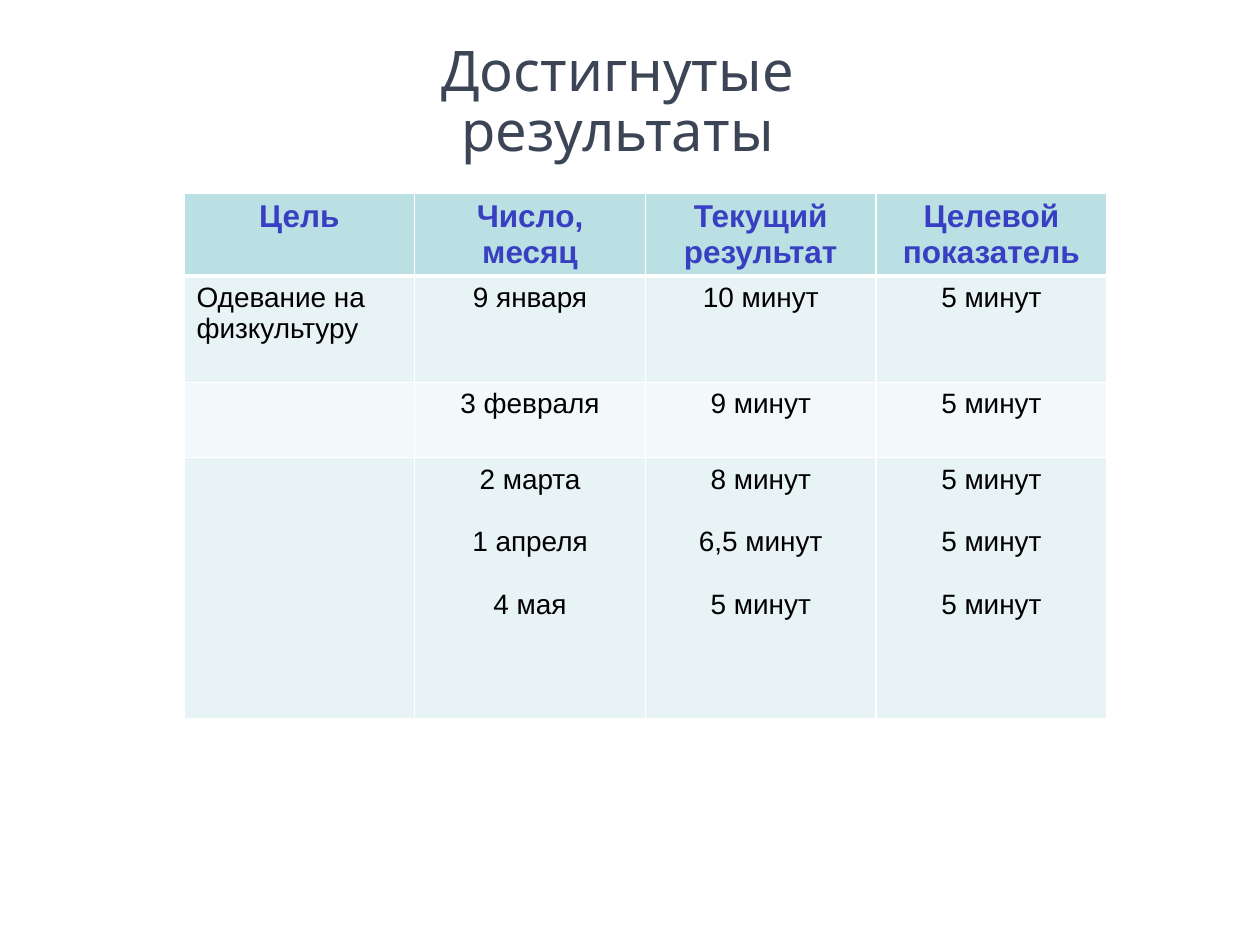
import dataclasses

import pptx
import pptx.dml.color
import pptx.enum.text
import pptx.oxml
import pptx.oxml.ns
import pptx.util

Cm = pptx.util.Cm
Pt = pptx.util.Pt
ALIGN = pptx.enum.text.PP_ALIGN
ANCHOR = pptx.enum.text.MSO_ANCHOR


@dataclasses.dataclass
class Row:
    height: float  # cm
    fill: str
    texts: list[str]
    size: int = 16
    color: str = "000000"
    bold: bool = False
    top: int = 1  # border widths, points
    base: int = 1


ROWS = [
    Row(1.65, "BBE0E3",
        ["Цель", "Число, месяц", "Текущий результат", "Целевой показатель"],
        18, "383FC2", True, base=3),
    Row(2.14, "E7F3F4",
        ["Одевание на физкультуру", "9 января", "10 минут", "5 минут"], top=3),
    Row(1.52, "F3F9FA", ["", "3 февраля", "9 минут", "5 минут"]),
    Row(5.26, "E7F3F4",
        ["", "2 марта\n1 апреля\n4 мая", "8 минут\n6,5 минут\n5 минут",
         "5 минут\n5 минут\n5 минут"]),
]


def paint(target, color: str) -> None:
    """Give a font or a fill a solid colour."""
    fill = target.fill if hasattr(target, "fill") else target
    fill.solid()
    fill.fore_color.rgb = pptx.dml.color.RGBColor.from_string(color)


def edge(cell, side: str, width: int) -> None:
    """Add a white border; must come before the cell's fill."""
    cell._tc.get_or_add_tcPr().append(pptx.oxml.parse_xml(
        f'<a:ln{side} {pptx.oxml.ns.nsdecls("a")} w="{Pt(width)}">'
        '<a:solidFill><a:srgbClr val="FFFFFF"/></a:solidFill>'
        f'</a:ln{side}>'))


def style(para, size: int, color: str, face: str, bold: bool = False) -> None:
    para.alignment = ALIGN.CENTER
    para.font.size = Pt(size)
    para.font.name = face
    para.font.bold = bold
    paint(para.font, color)


def draw(cell, row: Row, text: str) -> None:
    for side, width in zip("LRTB", (1, 1, row.top, row.base)):
        edge(cell, side, width)
    paint(cell.fill, row.fill)
    cell.text = text
    for i, para in enumerate(cell.text_frame.paragraphs):
        style(para, row.size, row.color, "Arial", row.bold)
        if i:
            para.space_before = Pt(18)


def main() -> None:
    deck = pptx.Presentation()
    deck.slide_width, deck.slide_height = Cm(25.4), Cm(19.05)
    slide = deck.slides.add_slide(deck.slide_layouts[5])

    # Title
    title = slide.shapes.title
    title.left, title.top = Cm(5.72), Cm(0.74)
    title.width, title.height = Cm(13.46), Cm(1.63)
    frame = title.text_frame
    frame.text = "Достигнутые результаты"
    frame.word_wrap = True
    frame.auto_size = pptx.enum.text.MSO_AUTO_SIZE.NONE
    frame.vertical_anchor = ANCHOR.TOP
    style(frame.paragraphs[0], 32, "3B4555", "League Spartan")
    frame.paragraphs[0].line_spacing = 0.9

    # Results table
    high = sum(row.height for row in ROWS)
    table = slide.shapes.add_table(
        len(ROWS), 4, Cm(3.71), Cm(3.89), Cm(18.6), Cm(high)).table
    for r, row in enumerate(ROWS):
        table.rows[r].height = Cm(row.height)
        for c, text in enumerate(row.texts):
            draw(table.cell(r, c), row, text)

    # The goal itself reads from the left
    table.cell(1, 0).text_frame.paragraphs[0].alignment = ALIGN.LEFT

    deck.save("out.pptx")


if __name__ == "__main__":
    main()
